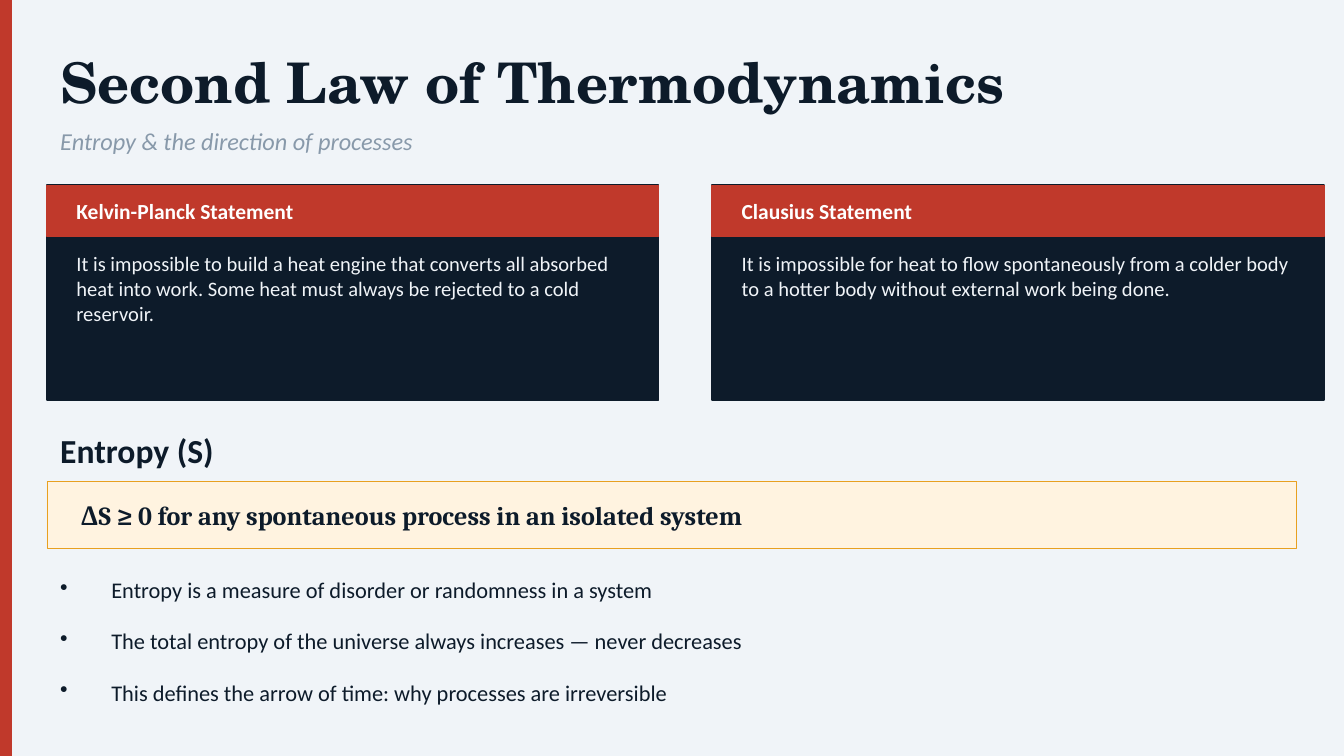
from lxml import etree
from pptx import Presentation
from pptx.dml.color import RGBColor
from pptx.enum.shapes import MSO_SHAPE
from pptx.enum.text import MSO_ANCHOR
from pptx.oxml.ns import qn
from pptx.util import Emu, Pt

SCALE = 4572  # EMU per px, 200 px to the inch
NAVY, RED, PALE, GREY = "0D1B2A", "C0392B", "F0F4F8", "8899AA"
WHITE, CREAM, AMBER = "FFFFFF", "FFF3E0", "E8A020"
MARGIN = 70


def px(n):
    return Emu(n * SCALE)


def color(value):
    return RGBColor.from_string(value)


def add_rect(s, x, y, w, h, fill, line, weight=1):
    sp = s.shapes.add_shape(MSO_SHAPE.RECTANGLE, px(x), px(y), px(w), px(h))
    sp.shadow.inherit = False
    sp.fill.solid()
    sp.fill.fore_color.rgb = color(fill)
    sp.line.color.rgb = color(line)
    sp.line.width = Pt(weight)


def add_text(s, x, y, w, h, text, size, ink=NAVY, font="Calibri",
             bold=False, italic=False, anchor=MSO_ANCHOR.MIDDLE):
    tf = s.shapes.add_textbox(px(x), px(y), px(w), px(h)).text_frame
    tf.word_wrap = True
    tf.vertical_anchor = anchor
    p = tf.paragraphs[0]
    p.text = text
    r = p.runs[0]
    r.font.name, r.font.size = font, Pt(size)
    r.font.bold, r.font.italic = bold, italic
    r.font.color.rgb = color(ink)
    return p


def add_bullet(p, indent):
    pPr = p._p.get_or_add_pPr()
    pPr.set("marL", str(px(indent)))
    pPr.set("indent", str(-px(indent)))
    etree.SubElement(pPr, qn("a:buChar"), char="•")


def add_header(s, x, y):
    add_text(s, x, y, 1800, 130, "Second Law of Thermodynamics", 30,
             font="TeX Gyre Schola", bold=True)
    add_text(s, x, y + 124, 1200, 60, "Entropy & the direction of processes",
             13, GREY, italic=True)


def add_card(s, x, y, w, h, title, body):
    bar_h, inset, text_w = 76, 24, w - 50
    add_rect(s, x, y, w, h, NAVY, NAVY)
    add_rect(s, x, y, w, bar_h, RED, RED)
    add_text(s, x + inset, y, text_w, bar_h, title, 11.5, WHITE, bold=True)
    add_text(s, x + inset, y + bar_h + 12, text_w, h - bar_h - 24, body, 11,
             PALE, anchor=MSO_ANCHOR.TOP)


def add_entropy(s, x, y, w, points):
    add_text(s, x, y, 800, 80, "Entropy (S)", 18, bold=True)
    # Formula band
    add_rect(s, x, y + 86, w, 100, CREAM, AMBER, 0.5)
    add_text(s, x + 30, y + 86, w - 60, 100,
             "ΔS ≥ 0 for any spontaneous process in an isolated system",
             14, font="Cambria", bold=True)
    # Bullet rows
    for i, point in enumerate(points):
        p = add_text(s, x, y + 214 + i * 76, w, 68, point, 12)
        add_bullet(p, 76)


def main():
    prs = Presentation()
    prs.slide_width, prs.slide_height = px(2000), px(1125)
    s = prs.slides.add_slide(prs.slide_layouts[6])
    s.background.fill.solid()
    s.background.fill.fore_color.rgb = color(PALE)

    # Left accent strip and heading
    add_rect(s, 0, 0, 16, 1125, RED, RED)
    add_header(s, MARGIN, 56)

    # Two statements of the law
    statements = [
        ("Kelvin-Planck Statement",
         "It is impossible to build a heat engine that converts all absorbed "
         "heat into work. Some heat must always be rejected to a cold "
         "reservoir."),
        ("Clausius Statement",
         "It is impossible for heat to flow spontaneously from a colder body "
         "to a hotter body without external work being done."),
    ]
    card_w, gap = 910, 80
    for i, (title, body) in enumerate(statements):
        add_card(s, MARGIN + i * (card_w + gap), 276, card_w, 320, title, body)

    # Entropy section
    add_entropy(s, MARGIN, 630, 1860, [
        "Entropy is a measure of disorder or randomness in a system",
        "The total entropy of the universe always increases — never decreases",
        "This defines the arrow of time: why processes are irreversible",
    ])
    prs.save("out.pptx")


if __name__ == "__main__":
    main()
